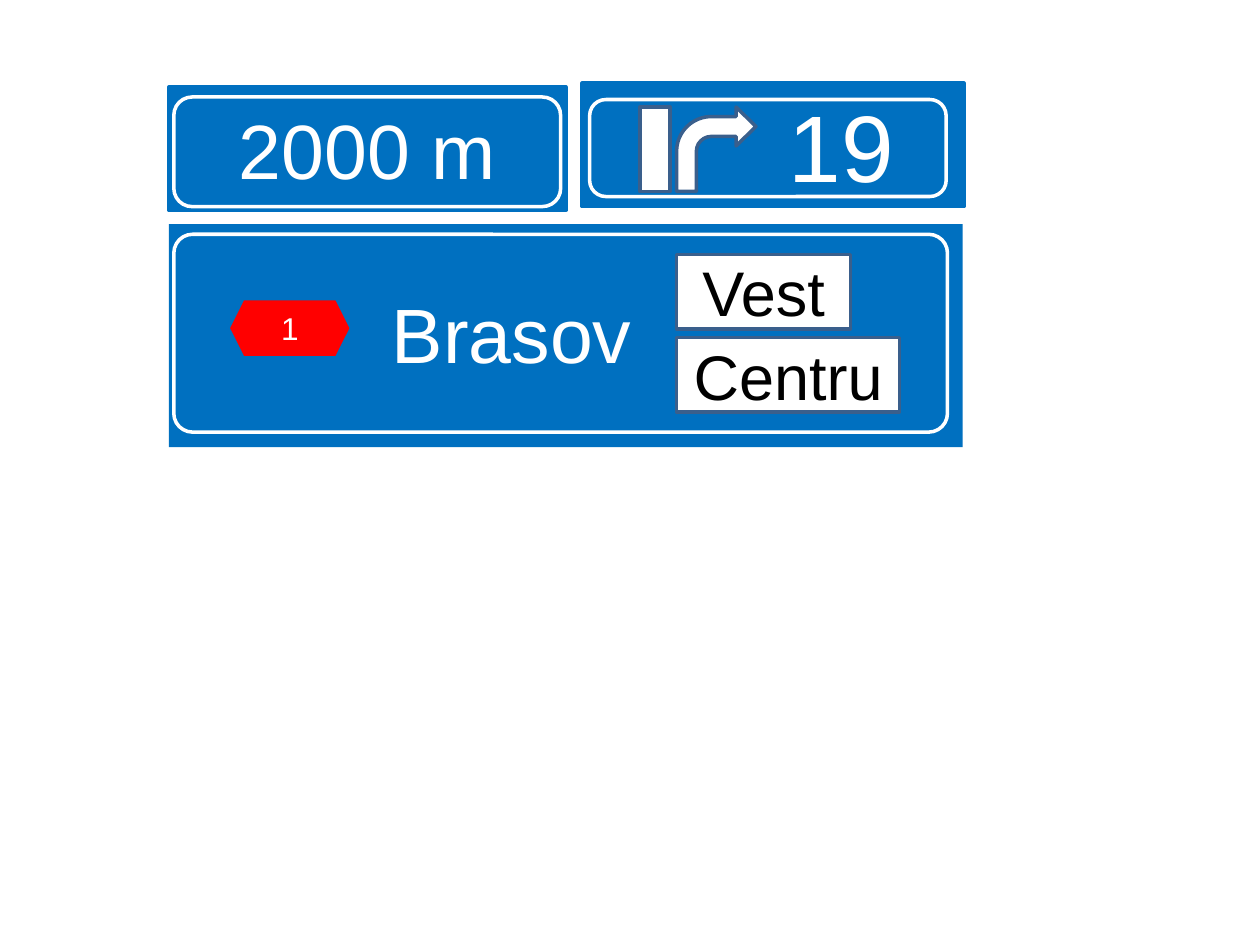
import pptx
import pptx.util
import pptx.dml.color
import pptx.enum.shapes
import pptx.enum.text

Inches = pptx.util.Inches
SHAPE = pptx.enum.shapes.MSO_SHAPE

COLOURS = {
    "blue": "0070C0",
    "white": "FFFFFF",
    "red": "FF0000",
    "edge": "3A5F8C",
    "black": "000000",
}

# kind, (left, top, width, height), fill, line, adjustments
PANELS = {
    "distance": (SHAPE.ROUNDED_RECTANGLE, (1.34, 0.69, 3.15, 0.98), "blue", "blue", [0]),
    "exit": (SHAPE.ROUNDED_RECTANGLE, (4.62, 0.66, 3.03, 0.98), "blue", "blue", [0]),
    "road ahead": (SHAPE.RECTANGLE, (5.08, 0.85, 0.24, 0.67), "white", "edge", []),
    "exit arrow": (SHAPE.BENT_ARROW, (5.37, 0.85, 0.63, 0.67), "white", "edge",
                   [0.25, 0.245, 0.25, 0.438]),
    "destination": (SHAPE.RECTANGLE, (1.34, 1.78, 6.3, 1.77), "blue", None, []),
    "destination border": (SHAPE.ROUNDED_RECTANGLE, (1.38, 1.86, 6.14, 1.57), None, "white",
                           [0.095]),
    "exit border": (SHAPE.ROUNDED_RECTANGLE, (4.68, 0.79, 2.83, 0.77), None, "white", []),
    "distance border": (SHAPE.ROUNDED_RECTANGLE, (1.38, 0.77, 3.07, 0.87), None, "white", []),
    "road number": (SHAPE.HEXAGON, (1.81, 2.37, 0.98, 0.47), "red", "blue", []),
    "west": (SHAPE.RECTANGLE, (5.37, 2.02, 1.38, 0.59), "white", "edge", []),
    "centre": (SHAPE.RECTANGLE, (5.37, 2.68, 1.77, 0.59), "white", "edge", []),
}

# text, size, colour, left inset, bottom inset, alignment
LABELS = {
    "distance": ("2000 m", 44, "white", 0.1, 0.05, "CENTER"),
    "exit": ("19", 54, "white", 1.18, 0.05, "CENTER"),
    "destination": ("Brasov", 44, "white", 1.77, 0.1, "LEFT"),
    "road number": ("1", 18, "white", 0.1, 0.05, "CENTER"),
    "west": ("Vest", 36, "black", 0.1, 0.05, "CENTER"),
    "centre": ("Centru", 36, "black", 0.1, 0.05, "CENTER"),
}


def paint(fill, colour):
    if colour is None:
        fill.background()
    else:
        fill.solid()
        fill.fore_color.rgb = pptx.dml.color.RGBColor.from_string(COLOURS[colour])


def add_panel(slide, kind, place, fill, line, adjustments):
    panel = slide.shapes.add_shape(kind, *map(Inches, place))
    panel.shadow.inherit = False
    for index, value in enumerate(adjustments):
        panel.adjustments[index] = value
    paint(panel.fill, fill)
    paint(panel.line.fill, line)
    if line:
        panel.line.width = pptx.util.Pt(2)
    return panel


def add_label(panel, text, size, colour, left_inset, bottom_inset, alignment):
    frame = panel.text_frame
    frame.word_wrap = True
    frame.vertical_anchor = pptx.enum.text.MSO_ANCHOR.MIDDLE
    frame.margin_left = Inches(left_inset)
    frame.margin_bottom = Inches(bottom_inset)
    para = frame.paragraphs[0]
    para.alignment = pptx.enum.text.PP_ALIGN[alignment]
    span = para.add_run()
    span.text = text
    span.font.name = "Arial"
    span.font.size = pptx.util.Pt(size)
    paint(span.font.fill, colour)


def main():
    deck = pptx.Presentation()
    deck.slide_width, deck.slide_height = Inches(10), Inches(7.5)
    slide = deck.slides.add_slide(deck.slide_layouts.get_by_name("Blank"))
    for name, style in PANELS.items():
        panel = add_panel(slide, *style)
        if name in LABELS:
            add_label(panel, *LABELS[name])
    deck.save("out.pptx")


if __name__ == "__main__":
    main()
